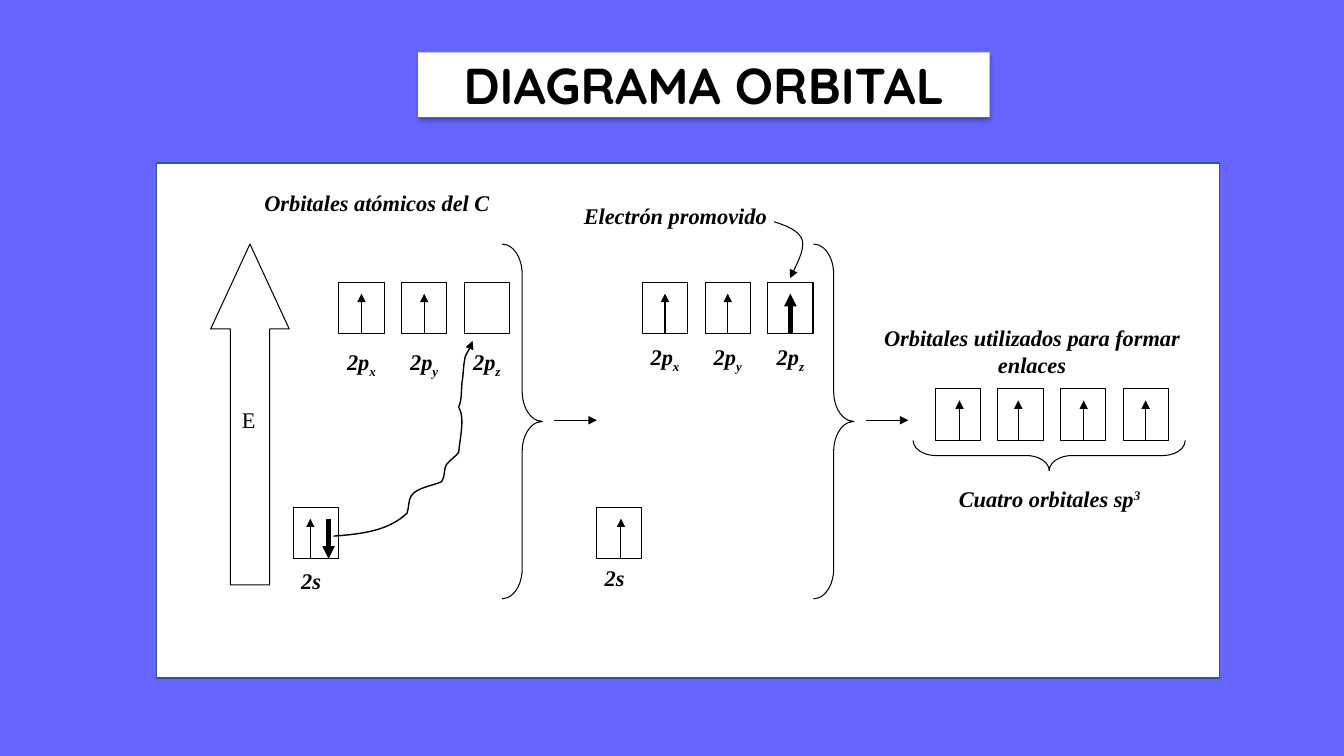
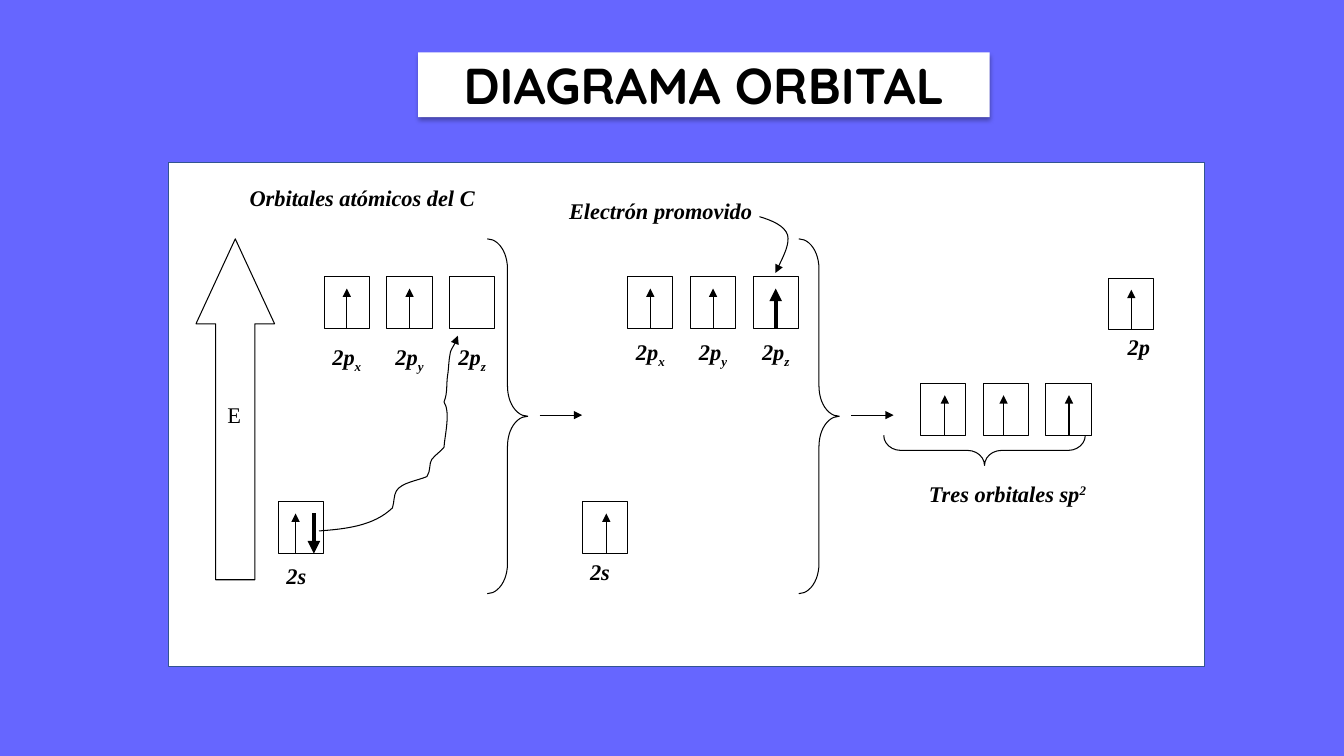
import dataclasses

import pptx
import pptx.dml.color
import pptx.enum.shapes
import pptx.enum.text
import pptx.oxml
import pptx.oxml.ns
import pptx.util

Cm = pptx.util.Cm
Pt = pptx.util.Pt
Shapes = pptx.enum.shapes.MSO_SHAPE
Align = pptx.enum.text.PP_ALIGN
Anchor = pptx.enum.text.MSO_ANCHOR
qn = pptx.oxml.ns.qn


@dataclasses.dataclass(frozen=True)
class Theme:
    background: str = "6666FF"
    panel: str = "FFFFFF"
    panel_line: str = "325491"
    ink: str = "000000"
    title_font: str = "Quicksand"
    body_font: str = "Times New Roman"
    title_size: float = 36
    body_size: float = 16
    thin: float = 0.75
    medium: float = 1
    thick: float = 3


THEME = Theme()
CELL_WIDTH, CELL_HEIGHT = 1.14, 1.3
CELL_STEP = 1.58
CELL_MIDDLE = CELL_WIDTH / 2
STAGE_STEP = 7.65
BRACE_STEP = 7.85
P_ORBITALS = ("x", "y", "z")
SHADOW = (
    '<a:effectLst xmlns:a="http://schemas.openxmlformats.org/drawingml/2006/main">'
    '<a:outerShdw blurRad="44450" dist="27940" dir="5400000" algn="ctr" rotWithShape="0">'
    '<a:srgbClr val="000000"><a:alpha val="32000"/></a:srgbClr>'
    "</a:outerShdw></a:effectLst>"
)
JUMP_CURVE = [
    (8.41, 13.51), (9.07, 13.46), (9.78, 13.39), (10.26, 12.93),
    (10.31, 12.78), (10.29, 12.62), (10.36, 12.5),
    (10.49, 12.29), (10.9, 12.24), (11.13, 12.14),
    (11.23, 11.99), (11.18, 11.81), (11.25, 11.71),
    (11.35, 11.58), (11.48, 11.51), (11.56, 11.4),
    (11.58, 11.1), (11.73, 10.52), (11.56, 10.26),
    (11.66, 10.03), (11.61, 9.78), (11.66, 9.53),
    (11.68, 9.37), (11.68, 9.22), (11.71, 9.07),
    (11.71, 8.97), (11.91, 8.69), (11.91, 8.59),
]
POINTER_CURVE = [
    (19.51, 5.59), (19.84, 5.69), (20.14, 5.82), (20.22, 6.05),
    (20.27, 6.27), (20.09, 6.65), (19.91, 7.01),
]


def rgb(code):
    return pptx.dml.color.RGBColor.from_string(code)


def write(frame, *spans, font=THEME.body_font, size=THEME.body_size,
          color=THEME.ink, bold=True, italic=True, anchor=Anchor.TOP):
    frame.word_wrap = True
    frame.auto_size = pptx.enum.text.MSO_AUTO_SIZE.NONE
    frame.vertical_anchor = anchor
    para = frame.paragraphs[0]
    para.alignment = Align.CENTER
    for text, baseline in spans:
        span = para.add_run()
        span.text = text
        span.font.name = font
        span.font.size = Pt(size)
        span.font.bold = bold
        span.font.italic = italic
        span.font.color.rgb = rgb(color)
        if baseline:
            span._r.get_or_add_rPr().set("baseline", str(baseline * 1000))


class Diagram:
    def __init__(self, deck, theme):
        self.deck = deck
        self.theme = theme
        self.page = None
        self.shift = (0, 0)
        fill = deck.slide_master.background.fill
        fill.solid()
        fill.fore_color.rgb = rgb(theme.background)

    def start(self, title, shift):
        self.page = self.deck.slides.add_slide(self.deck.slide_layouts[5])
        self.shift = shift
        box = self.page.shapes.title
        box.left, box.top, box.width, box.height = map(Cm, (10.54, 1.32, 14.4, 1.63))
        box.fill.solid()
        box.fill.fore_color.rgb = rgb(self.theme.panel)
        box._element.spPr.append(pptx.oxml.parse_xml(SHADOW))
        write(box.text_frame, (title, 0), font=self.theme.title_font,
              size=self.theme.title_size, italic=False, anchor=Anchor.MIDDLE)

    def place(self, x, y):
        return Cm(x + self.shift[0]), Cm(y + self.shift[1])

    def stroke(self, line, weight, arrow=False):
        line.color.rgb = rgb(self.theme.ink)
        line.width = Pt(weight)
        if arrow:
            tail = line._get_or_add_ln().makeelement(qn("a:tailEnd"), {"type": "triangle"})
            line._get_or_add_ln().append(tail)

    def panel(self, left, top, width, height):
        box = self.page.shapes.add_shape(Shapes.RECTANGLE, *map(Cm, (left, top, width, height)))
        box.shadow.inherit = False
        box.fill.solid()
        box.fill.fore_color.rgb = rgb(self.theme.panel)
        box.line.color.rgb = rgb(self.theme.panel_line)
        box.line.width = Pt(self.theme.medium)

    def outline(self, kind, x, y, width, height, adjust=(), rotation=0):
        box = self.page.shapes.add_shape(kind, *self.place(x, y), Cm(width), Cm(height))
        box.shadow.inherit = False
        box.fill.background()
        box.rotation = rotation
        for index, value in enumerate(adjust):
            box.adjustments[index] = value
        self.stroke(box.line, self.theme.thin)

    def label(self, center, y, *spans, width=1.6, height=1.3, **style):
        box = self.page.shapes.add_textbox(
            *self.place(center - width / 2, y), Cm(width), Cm(height))
        write(box.text_frame, *spans, **style)

    def arrow(self, start, end, weight=THEME.thin):
        line = self.page.shapes.add_connector(
            pptx.enum.shapes.MSO_CONNECTOR.STRAIGHT, *self.place(*start), *self.place(*end))
        self.stroke(line.line, weight, arrow=True)
        effects = line._element.spPr.makeelement(qn("a:effectLst"), {})
        line._element.spPr.append(effects)

    def curve(self, points, weight):
        start, *others = [self.place(*point) for point in points]
        builder = self.page.shapes.build_freeform(*start, scale=1.0)
        builder.add_line_segments(others, close=False)
        shape = builder.convert_to_shape()
        shape.shadow.inherit = False
        shape.fill.background()
        self.stroke(shape.line, weight, arrow=True)
        segments = list(shape._element.iter(qn("a:lnTo")))
        for index in range(0, len(segments), 3):
            first = segments[index]
            bend = first.makeelement(qn("a:cubicBezTo"), {})
            first.addprevious(bend)
            for segment in segments[index:index + 3]:
                bend.append(segment[0])
                segment.getparent().remove(segment)

    def cell(self, x, y):
        self.outline(Shapes.RECTANGLE, x, y, CELL_WIDTH, CELL_HEIGHT)

    def electron(self, x, y, offset=CELL_MIDDLE, weight=THEME.thin, down=False):
        ends = [(x + offset, y + CELL_HEIGHT), (x + offset, y + 0.29)]
        self.arrow(*(reversed(ends) if down else ends), weight=weight)

    def p_row(self, x, y, label_y, weights):
        for index, (axis, weight) in enumerate(zip(P_ORBITALS, weights)):
            left = x + index * CELL_STEP
            self.cell(left, y)
            if weight:
                self.electron(left, y, weight=weight)
            self.label(left + CELL_MIDDLE, label_y, ("2p", 0), (axis, -25))

    def hybrid_row(self, x, y, offsets):
        for index, offset in enumerate(offsets):
            left = x + index * CELL_STEP
            self.cell(left, y)
            self.electron(left, y, offset)

    def hybrid_caption(self, text, power, brace_center, span, bend, text_center):
        depth = 0.76
        self.outline(Shapes.RIGHT_BRACE, brace_center - depth / 2, 11.48 - span / 2,
                     depth, span, adjust=(bend, 0.5), rotation=90)
        self.label(text_center, 12.1, (text, 0), (power, 30), width=7.09)

    def promotion(self, jump_weight):
        thin, thick = self.theme.thin, self.theme.thick
        self.outline(Shapes.UP_ARROW, 5.31, 6.15, 1.98, 8.59, adjust=(0.5, 1.081))
        self.label(6.27, 10.11, ("E", 0), width=1, bold=False, italic=False)
        self.label(9.5, 4.65, ("Orbitales atómicos del C", 0), width=7.98)
        self.label(17.02, 4.98, ("Electrón promovido", 0), width=6.6)

        ground_x, p_x, s_y, p_y = 7.39, 8.54, 12.78, 7.11
        promoted_x = ground_x + STAGE_STEP
        self.p_row(p_x, p_y, 8.66, (thin, thin, None))
        self.p_row(p_x + STAGE_STEP, p_y, 8.53, (thin, thin, thick))
        for x, label_y in ((ground_x, 14.17), (promoted_x, 14.08)):
            self.cell(x, s_y)
            self.label(x + 0.45, label_y, ("2s", 0))
        self.electron(ground_x, s_y, offset=0.43)
        self.electron(ground_x, s_y, offset=0.89, weight=thick, down=True)
        self.electron(promoted_x, s_y, offset=0.61)

        for step in (0, BRACE_STEP):
            self.outline(Shapes.RIGHT_BRACE, 12.65 + step, 6.15, 1.02, 8.94,
                         adjust=(0.742, 0.5))
            self.arrow((13.97 + step, 10.59), (15.04 + step, 10.59))
        self.curve(POINTER_CURVE, thin)
        self.curve(JUMP_CURVE, jump_weight)


def main():
    deck = pptx.Presentation()
    deck.slide_width, deck.slide_height = Cm(33.87), Cm(19.05)
    diagram = Diagram(deck, THEME)
    title = "DIAGRAMA ORBITAL"
    hybrid_x, hybrid_y = 23.57, 9.8
    offsets = (0.61, 0.51, 0.58, 0.56)

    diagram.start(title, shift=(0, 0))
    diagram.panel(3.94, 4.11, 26.8, 12.98)
    diagram.promotion(THEME.medium)
    diagram.label(26.01, 8.05, ("Orbitales utilizados para formar enlaces", 0),
                  width=7.98, height=1.85)
    diagram.hybrid_row(hybrid_x, hybrid_y, offsets)
    diagram.hybrid_caption("Cuatro orbitales sp", "3", 26.44, 6.86, 0.757, 26.45)

    diagram.start(title, shift=(-0.37, -0.13))
    diagram.panel(4.24, 4.09, 26.11, 12.7)
    diagram.promotion(THEME.thin)
    diagram.hybrid_row(hybrid_x, hybrid_y, offsets[:3])
    diagram.hybrid_caption("Tres orbitales sp", "2", 25.18, 5.08, 0.565, 25.76)
    diagram.cell(28.31, 7.14)
    diagram.electron(28.31, 7.14)
    diagram.label(29.07, 8.41, ("2p", 0))

    deck.save("out.pptx")


if __name__ == "__main__":
    main()
